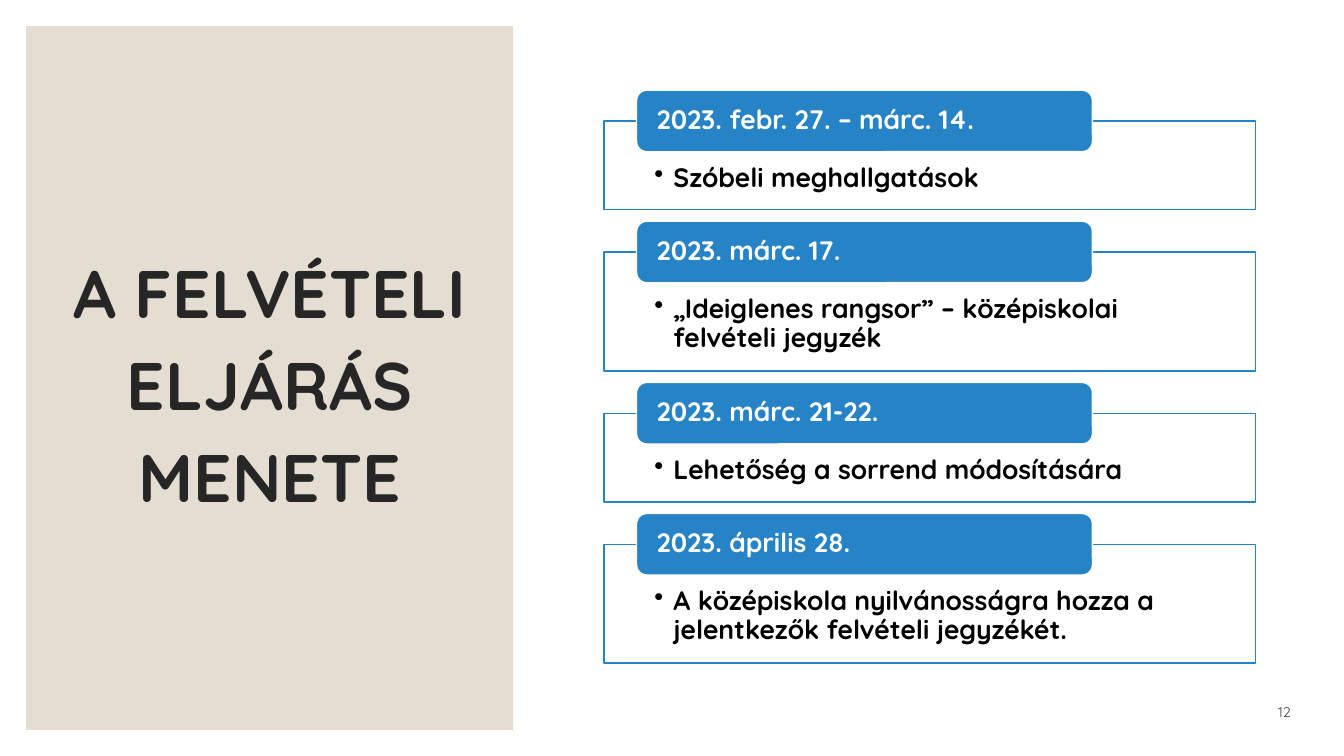
"""Build the slide that lists the steps of the admission procedure."""
from dataclasses import dataclass

from lxml.etree import SubElement
from pptx import Presentation
from pptx.dml.color import RGBColor
from pptx.enum.shapes import MSO_SHAPE as Shape
from pptx.enum.text import MSO_ANCHOR as Anchor, MSO_AUTO_SIZE as AutoSize, PP_ALIGN as Align
from pptx.oxml.ns import qn
from pptx.util import Inches, Pt

SLIDE_WIDTH, SLIDE_HEIGHT = Inches(13.33), Inches(7.5)
FONT = "Quicksand"
COLOURS = {
    "white": "FFFFFF",
    "sand": "E3DED1",
    "blue": "2683C6",
    "black": "000000",
    "title": "262626",
    "number": "404040",
}
STEPS = [
    ("2023. febr. 27. – márc. 14.", "Szóbeli meghallgatások", 1),
    ("2023. márc. 17.", "„Ideiglenes rangsor” – középiskolai felvételi jegyzék", 2),
    ("2023. márc. 21-22.", "Lehetőség a sorrend módosítására", 1),
    ("2023. április 28.", "A középiskola nyilvánosságra hozza a jelentkezők felvételi jegyzékét.", 2),
]
CARD_BASE, LINE_HEIGHT, CARD_GAP, TAB_HEIGHT = 7.73, 4, 5.6, 8.13


@dataclass
class Box:
    """An area whose lengths are percentages of the slide's size."""
    left: float
    top: float
    width: float
    height: float

    def place(self):
        """Return left, top, width and height in EMU."""
        return (across(self.left), down(self.top), across(self.width), down(self.height))


def across(share):
    """Turn a percentage of the slide's width into EMU."""
    return int(SLIDE_WIDTH * share / 100)


def down(share):
    """Turn a percentage of the slide's height into EMU."""
    return int(SLIDE_HEIGHT * share / 100)


def colour(name):
    """Look up a named colour."""
    return RGBColor.from_string(COLOURS[name])


def add_block(slide, kind, box, fill, line=None):
    """Add a flat filled shape with an optional outline."""
    shape = slide.shapes.add_shape(kind, *box.place())
    shape.shadow.inherit = False
    shape.fill.solid()
    shape.fill.fore_color.rgb = colour(fill)
    if line:
        shape.line.color.rgb = colour(line)
        shape.line.width = Pt(1)
    else:
        shape.line.fill.background()
    return shape


def write(shape, text, size, colour_name, align, anchor, bold=True, spacing=0.9, margins=(0, 0, 0, 0)):
    """Fill a shape with one formatted paragraph and return it."""
    frame = shape.text_frame
    frame.text = text
    frame.word_wrap = True
    frame.auto_size = AutoSize.NONE
    frame.vertical_anchor = anchor
    frame.margin_left, frame.margin_top, frame.margin_right, frame.margin_bottom = margins
    paragraph = frame.paragraphs[0]
    paragraph.alignment = align
    paragraph.line_spacing = spacing
    for run in paragraph.runs:
        run.font.name = FONT
        run.font.size = Pt(size)
        run.font.bold = bold
        run.font.color.rgb = colour(colour_name)
    return paragraph


def add_bullet(paragraph, indent):
    """Give a paragraph a hanging round bullet."""
    properties = paragraph._p.get_or_add_pPr()
    properties.set("marL", str(indent))
    properties.set("indent", str(-indent))
    SubElement(properties, qn("a:buChar")).set("char", "•")


def set_opacity(shape, percent):
    """Make the solid fill of a shape partly transparent."""
    fill_colour = shape._element.spPr.find(qn("a:solidFill"))[0]
    SubElement(fill_colour, qn("a:alpha")).set("val", str(percent * 1000))


def add_title_panel(slide, box):
    """Place the sand panel with the title centred on it."""
    panel = add_block(slide, Shape.RECTANGLE, box, "sand")
    title = slide.shapes.title
    title.element.addprevious(panel.element)
    inset_x, inset_y = 2.75, 4.67
    area = Box(box.left + inset_x, box.top + inset_y, box.width - 2 * inset_x, box.height - 2 * inset_y)
    title.left, title.top, title.width, title.height = area.place()
    write(title, "A FELVÉTELI ELJÁRÁS MENETE", 48, "title", Align.CENTER, Anchor.MIDDLE, spacing=1.14)


def add_step(slide, box, date, event):
    """Place one outlined card with its date tab over the top edge."""
    card = add_block(slide, Shape.RECTANGLE, box, "white", "blue")
    set_opacity(card, 90)
    side = across(3.76)
    paragraph = write(card, event, 19, "black", Align.LEFT, Anchor.TOP,
                      margins=(side, down(5.73), side, down(2)))
    add_bullet(paragraph, across(1.41))
    tab_box = Box(box.left + box.width * 0.05, box.top - TAB_HEIGHT / 2, box.width * 0.7, TAB_HEIGHT)
    tab = add_block(slide, Shape.ROUNDED_RECTANGLE, tab_box, "blue", "white")
    side = across(1.28)
    write(tab, date, 19, "white", Align.LEFT, Anchor.MIDDLE, margins=(side, 0, side, 0))


def add_steps(slide, box):
    """Stack the step cards downwards from the top of the box."""
    top = box.top
    for date, event, lines in STEPS:
        height = CARD_BASE + LINE_HEIGHT * lines
        add_step(slide, Box(box.left, top, box.width, height), date, event)
        top += height + CARD_GAP


def add_slide_number(slide, box):
    """Place the slide number at the lower right."""
    number = slide.shapes.add_textbox(*box.place())
    write(number, "12", 10, "number", Align.RIGHT, Anchor.BOTTOM, bold=False, spacing=1.0,
          margins=(Inches(0.1), Inches(0.05), Inches(0.1), Inches(0.05))).space_after = Pt(6)


def main():
    """Build and save the presentation."""
    presentation = Presentation()
    presentation.slide_width, presentation.slide_height = SLIDE_WIDTH, SLIDE_HEIGHT
    slide = presentation.slides.add_slide(presentation.slide_layouts[5])
    slide.background.fill.solid()
    slide.background.fill.fore_color.rgb = colour("white")
    add_title_panel(slide, Box(1.95, 3.47, 36.23, 93.07))
    add_slide_number(slide, Box(90.02, 92, 6.75, 4))
    add_steps(slide, Box(44.94, 16, 48.46, 71.73))
    presentation.save("out.pptx")


if __name__ == "__main__":
    main()
